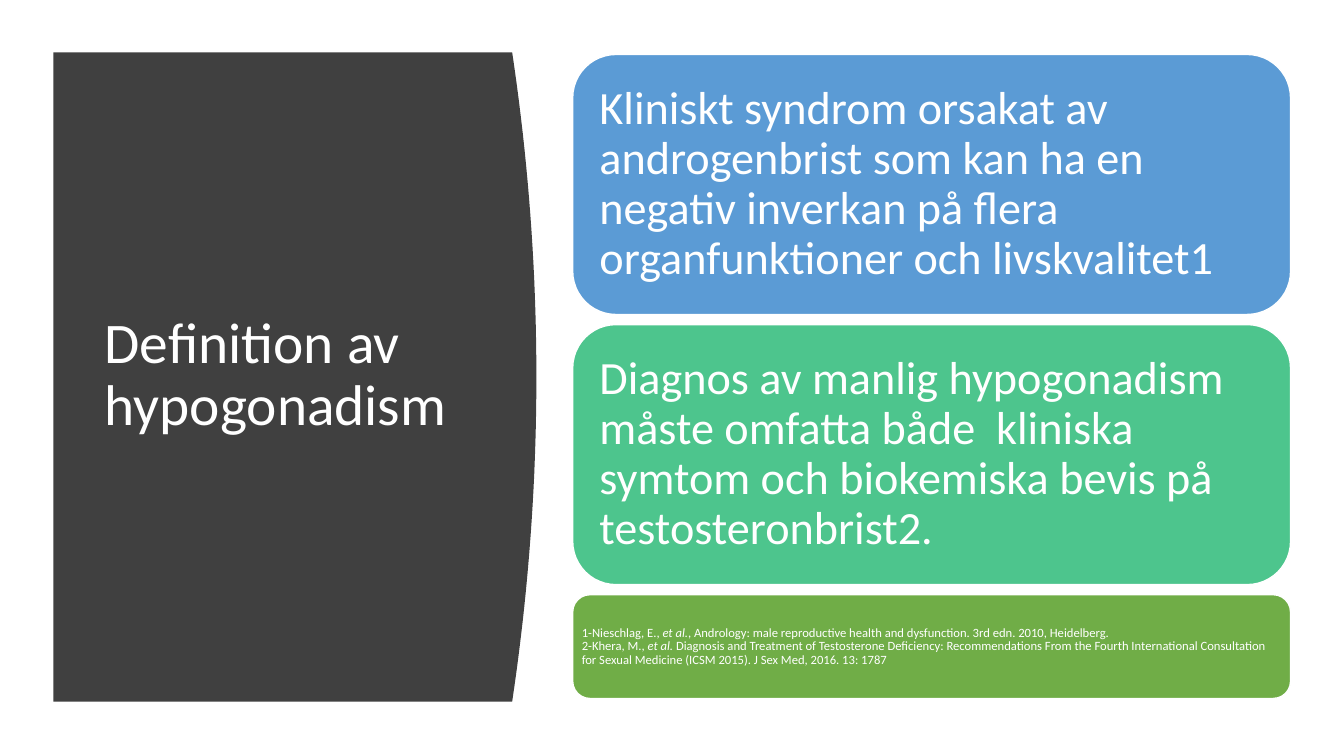
from pptx import Presentation
from pptx.dml.color import RGBColor
from pptx.enum.shapes import MSO_SHAPE
from pptx.enum.text import MSO_ANCHOR, PP_ALIGN
from pptx.util import Emu, Pt

# Content: each text is a list of lines, each line a list of (words, italic)
TITLE = [[("Definition av hypogonadism", False)]]
SYNDROME = [[("Kliniskt syndrom orsakat av androgenbrist som kan ha en negativ "
              "inverkan på flera organfunktioner och livskvalitet1", False)]]
DIAGNOSIS = [[("Diagnos av manlig hypogonadism måste omfatta både  kliniska symtom "
               "och biokemiska bevis på testosteronbrist2.", False)]]
REFERENCES = [
    [("1-Nieschlag, E., ", False), ("et al.", True),
     (", Andrology: male reproductive health and dysfunction. 3rd edn. 2010, "
      "Heidelberg.", False)],
    [("2-Khera, M., ", False), ("et al. ", True),
     ("Diagnosis and Treatment of Testosterone Deficiency: Recommendations From the "
      "Fourth International Consultation for Sexual Medicine (ICSM 2015). "
      "J Sex Med, 2016. 13: 1787", False)],
]

COLOURS = {"panel": "404040", "blue": "5B9BD5", "teal": "4DC58D",
           "green": "70AD47", "white": "FFFFFF"}

# Cards from top to bottom: lines, fill, height, text size, inset
CARDS = [
    (SYNDROME, "blue", 258, 33, 14),
    (DIAGNOSIS, "teal", 258, 33, 14),
    (REFERENCES, "green", 103, 9, 4),
]

# Layout in px, 100 to the inch
SCALE = 9144
SLIDE = (1333, 750)
PANEL = {"left": 53, "top": 52, "corner": 508, "bulge": 24, "height": 644}
TITLE_BOX = (94, 111, 374, 524)
CARD_LEFT, CARD_TOP, CARD_WIDTH, CARD_GAP = 568, 54, 712, 10
CURVE_STEPS = 40


def px(length):
    return Emu(round(length * SCALE))


def colour(name):
    return RGBColor.from_string(COLOURS[name])


def write(shape, lines, size, insets):
    frame = shape.text_frame
    frame_format = {"word_wrap": True, "vertical_anchor": MSO_ANCHOR.MIDDLE}
    for side, inset in zip(("left", "top", "right", "bottom"), insets):
        frame_format[f"margin_{side}"] = px(inset)
    for name, value in frame_format.items():
        setattr(frame, name, value)

    para = frame.paragraphs[0]
    para.alignment = PP_ALIGN.LEFT
    para.line_spacing = 0.9
    for number, line in enumerate(lines):
        if number:
            para.add_line_break()
        for words, italic in line:
            span = para.add_run()
            span.text = words
            span_format = {"name": "Calibri", "size": Pt(size), "italic": italic}
            for name, value in span_format.items():
                setattr(span.font, name, value)
            span.font.color.rgb = colour("white")


deck = Presentation()
deck.slide_width, deck.slide_height = map(px, SLIDE)
page = deck.slides.add_slide(deck.slide_layouts[6])

# Dark panel whose right edge bows out as a parabola
bottom = PANEL["top"] + PANEL["height"]
edge = []
for step in range(CURVE_STEPS + 1):
    part = step / CURVE_STEPS
    bow = PANEL["bulge"] * (1 - (2 * part - 1) ** 2)
    edge.append((px(PANEL["corner"] + bow), px(PANEL["top"] + part * PANEL["height"])))
outline = page.shapes.build_freeform(px(PANEL["left"]), px(PANEL["top"]))
outline.add_line_segments(edge + [(px(PANEL["left"]), px(bottom))], close=True)
panel = outline.convert_to_shape()
panel.shadow.inherit = False
panel.fill.solid()
panel.fill.fore_color.rgb = colour("panel")
panel.line.fill.background()

# Title
title = page.shapes.add_textbox(*map(px, TITLE_BOX))
write(title, TITLE, 41, (10, 5, 10, 5))

# Stacked cards
top = CARD_TOP
for lines, fill, height, size, inset in CARDS:
    card = page.shapes.add_shape(MSO_SHAPE.ROUNDED_RECTANGLE, px(CARD_LEFT), px(top),
                                 px(CARD_WIDTH), px(height))
    card.shadow.inherit = False
    card.fill.solid()
    card.fill.fore_color.rgb = colour(fill)
    card.line.color.rgb = colour("white")
    card.line.width = Pt(1)
    write(card, lines, size, (inset,) * 4)
    top += height + CARD_GAP

deck.save("out.pptx")
